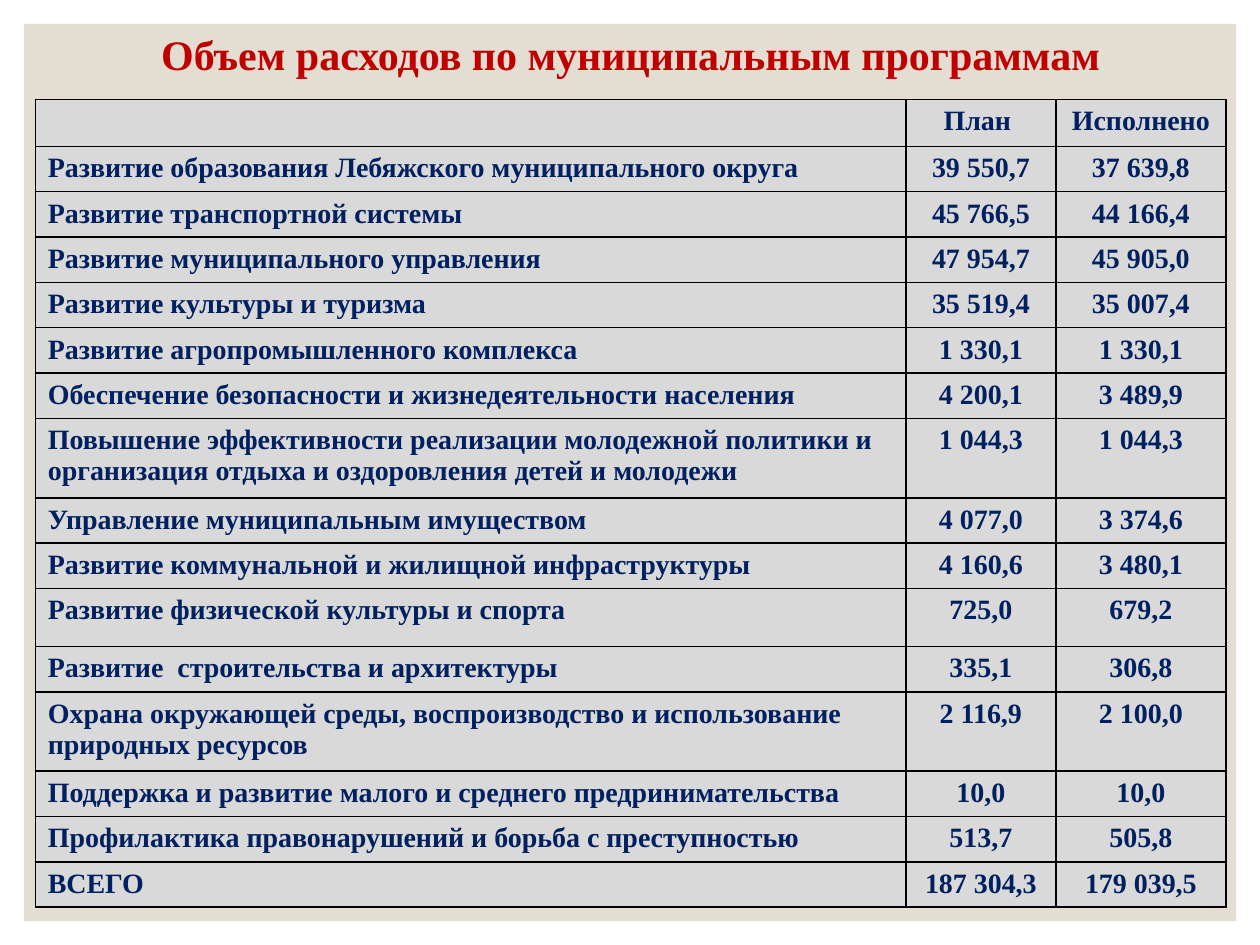
import lxml.etree
import pptx
import pptx.dml.color
import pptx.enum.shapes
import pptx.enum.text
import pptx.oxml.ns
import pptx.util

Inches = pptx.util.Inches
Pt = pptx.util.Pt
qn = pptx.oxml.ns.qn

COLORS = {
    "panel": "E3DED1",
    "cell": "D9D9D9",
    "title": "C00000",
    "text": "002060",
    "border": "000000",
}

TITLE = "Объем расходов по муниципальным программам"
PROGRAMS = [
    ("", "План ", "Исполнено"),
    ("Развитие образования Лебяжского муниципального округа", "39 550,7", "37 639,8"),
    ("Развитие транспортной системы", "45 766,5", "44 166,4"),
    ("Развитие муниципального управления", "47 954,7", "45 905,0"),
    ("Развитие культуры и туризма", "35 519,4", "35 007,4"),
    ("Развитие агропромышленного комплекса", "1 330,1", "1 330,1"),
    ("Обеспечение безопасности и жизнедеятельности населения", "4 200,1", "3 489,9"),
    ("Повышение эффективности реализации молодежной политики и "
     "организация отдыха и оздоровления детей и молодежи", "1 044,3", "1 044,3"),
    ("Управление муниципальным имуществом", "4 077,0", "3 374,6"),
    ("Развитие коммунальной и жилищной инфраструктуры", "4 160,6", "3 480,1"),
    ("Развитие физической культуры и спорта", "725,0", "679,2"),
    ("Развитие  строительства и архитектуры", "335,1", "306,8"),
    ("Охрана окружающей среды, воспроизводство и использование "
     "природных ресурсов", "2 116,9", "2 100,0"),
    ("Поддержка и развитие малого и среднего предринимательства", "10,0", "10,0"),
    ("Профилактика правонарушений и борьба с преступностью", "513,7", "505,8"),
    ("ВСЕГО", "187 304,3", "179 039,5"),
]
COLUMN_WIDTHS = [6.91, 1.19, 1.35]
TITLE_HEIGHT = 0.58
ROW_HEIGHT = 0.36
TALL_ROWS = {7: 0.63, 10: 0.46, 12: 0.63}


class BudgetSlide:
    font = "Times New Roman"
    title_size = 24
    text_size = 16

    def __init__(self, slide):
        self.slide = slide

    def color(self, name):
        return pptx.dml.color.RGBColor.from_string(COLORS[name])

    def panel(self, left, top, width, height):
        panel = self.slide.shapes.add_shape(
            pptx.enum.shapes.MSO_SHAPE.RECTANGLE,
            Inches(left), Inches(top), Inches(width), Inches(height))
        panel.shadow.inherit = False
        panel.fill.solid()
        panel.fill.fore_color.rgb = self.color("panel")
        panel.line.fill.background()

    def borders(self, cell, visible):
        properties = cell._tc.get_or_add_tcPr()
        for position, side in enumerate("LRTB"):
            line = lxml.etree.Element(qn(f"a:ln{side}"), w=str(Pt(1)))
            if side in visible:
                fill = lxml.etree.SubElement(line, qn("a:solidFill"))
                lxml.etree.SubElement(fill, qn("a:srgbClr"), val=COLORS["border"])
            else:
                lxml.etree.SubElement(line, qn("a:noFill"))
            properties.insert(position, line)

    def text(self, cell, words, size, color, centered):
        paragraph = cell.text_frame.paragraphs[0]
        if centered:
            paragraph.alignment = pptx.enum.text.PP_ALIGN.CENTER
        if not words:
            lxml.etree.SubElement(
                paragraph._p, qn("a:endParaRPr"), sz=str(size * 100))
            return
        paragraph.text = words
        for run in paragraph.runs:
            run.font.name = self.font
            run.font.size = Pt(size)
            run.font.bold = True
            run.font.color.rgb = self.color(color)

    def table(self, left, top, title, programs):
        heights = [TITLE_HEIGHT] + [
            TALL_ROWS.get(index, ROW_HEIGHT) for index in range(len(programs))]
        table = self.slide.shapes.add_table(
            len(heights), len(COLUMN_WIDTHS), Inches(left), Inches(top),
            Inches(sum(COLUMN_WIDTHS)), Inches(sum(heights))).table
        table.first_row = False
        table.horz_banding = False
        for column, width in zip(table.columns, COLUMN_WIDTHS):
            column.width = Inches(width)
        for row, height in zip(table.rows, heights):
            row.height = Inches(height)

        for cell in table.rows[0].cells:
            cell.fill.background()
            self.borders(cell, "B")
        title_cell = table.cell(0, 0)
        title_cell.merge(table.cell(0, len(COLUMN_WIDTHS) - 1))
        self.text(title_cell, title, self.title_size, "title", True)

        for row_index, program in enumerate(programs, 1):
            for column_index, words in enumerate(program):
                cell = table.cell(row_index, column_index)
                cell.fill.solid()
                cell.fill.fore_color.rgb = self.color("cell")
                self.borders(cell, "LRTB")
                self.text(cell, words, self.text_size, "text", column_index > 0)


def main():
    presentation = pptx.Presentation()
    presentation.slide_width = Inches(10)
    presentation.slide_height = Inches(7.5)
    budget = BudgetSlide(presentation.slides.add_slide(presentation.slide_layouts[6]))
    budget.panel(0.19, 0.19, 9.62, 7.12)
    budget.table(0.28, 0.21, TITLE, PROGRAMS)
    presentation.save("out.pptx")


if __name__ == "__main__":
    main()
